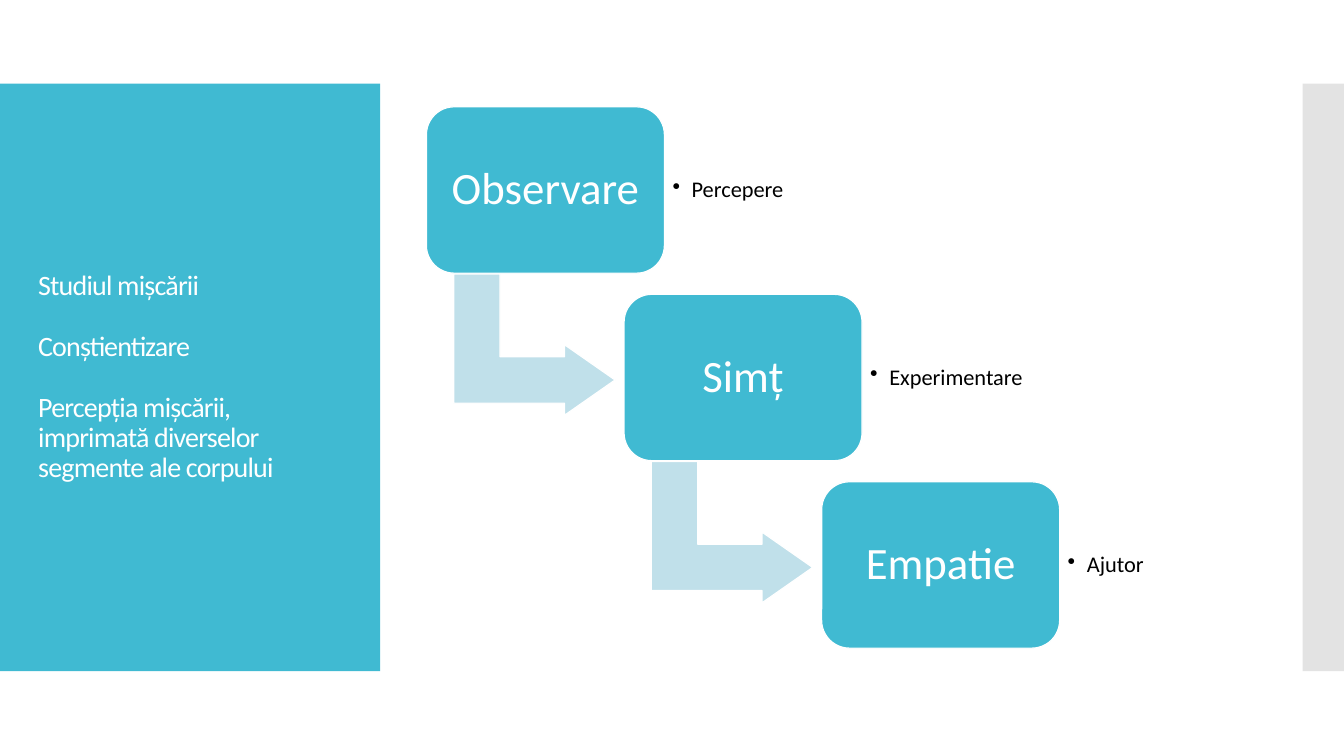
"""Build a slide on movement study with a three-step staircase from observation to empathy."""
from lxml import etree
from pptx import Presentation
from pptx.dml.color import RGBColor
from pptx.enum.shapes import MSO_SHAPE
from pptx.enum.text import MSO_ANCHOR, PP_ALIGN
from pptx.oxml.ns import qn
from pptx.util import Inches, Pt

COLORS = {"teal": "40BAD2", "pale": "C0E0EA", "grey": "C8C8C8", "white": "FFFFFF", "black": "000000"}
TOPICS = ["Studiul mișcării", "Conștientizare", "Percepția mișcării, imprimată diverselor segmente ale corpului"]
STEPS = [("Observare", "Percepere"), ("Simț", "Experimentare"), ("Empatie", "Ajutor")]
LEFT, TOP = 4.23, 1.06
STEP_X, STEP_Y = 1.96, 1.86
BOX_W, BOX_H = 2.36, 1.65

prs = Presentation()
prs.slide_width, prs.slide_height = Inches(13.33), Inches(7.5)
slide = prs.slides.add_slide(prs.slide_layouts[6])


def add_block(kind, left, top, width, height, color, outlined=False):
    block = slide.shapes.add_shape(kind, Inches(left), Inches(top), Inches(width), Inches(height))
    block.shadow.inherit = False
    block.fill.solid()
    block.fill.fore_color.rgb = RGBColor.from_string(COLORS[color])
    if outlined:
        block.line.color.rgb = RGBColor.from_string(COLORS["white"])
        block.line.width = Pt(0.85)
    else:
        block.line.fill.background()
    return block


def write(shape, lines, size, color, align, inset):
    frame = shape.text_frame
    frame.word_wrap = True
    frame.vertical_anchor = MSO_ANCHOR.MIDDLE
    frame.margin_left = frame.margin_right = frame.margin_top = frame.margin_bottom = Inches(inset)
    frame.text = "\n".join(lines)
    for paragraph in frame.paragraphs:
        paragraph.alignment = align
        paragraph.line_spacing = 0.9
        paragraph.font.size = Pt(size)
        paragraph.font.name = "Calibri"
        paragraph.font.color.rgb = RGBColor.from_string(COLORS[color])
    return frame.paragraphs


add_block(MSO_SHAPE.RECTANGLE, 0, 0.83, 3.77, 5.83, "teal")
edge_bar = add_block(MSO_SHAPE.RECTANGLE, 12.92, 0.83, 0.41, 5.83, "grey")
edge_color = edge_bar.fill._xPr.find(qn("a:solidFill"))[0]
etree.SubElement(edge_color, qn("a:alpha"), val="50000")

topics = slide.shapes.add_textbox(Inches(0.28), Inches(1.23), Inches(3.22), Inches(5.03))
topic_lines = write(topics, TOPICS, 20, "white", PP_ALIGN.LEFT, 0.1)
for topic in topic_lines:
    topic.runs[0].font._element.set("spc", "-60")
for topic in topic_lines[:-1]:
    topic.space_after = Pt(22)

for index, (step, meaning) in enumerate(STEPS):
    left, top = LEFT + index * STEP_X, TOP + index * STEP_Y
    if index < len(STEPS) - 1:
        bend = add_block(MSO_SHAPE.BENT_UP_ARROW, left + 0.37, top + 1.56, 1.4, 1.6, "pale", True)
        bend.rotation = 90
        for position, ratio in enumerate([0.328, 0.25, 0.358]):
            bend.adjustments[position] = ratio

    step_box = add_block(MSO_SHAPE.ROUNDED_RECTANGLE, left, top, BOX_W, BOX_H, "teal", True)
    step_box.adjustments[0] = 0.167
    write(step_box, [step], 32, "white", PP_ALIGN.CENTER, 0.13)

    note = slide.shapes.add_textbox(Inches(left + BOX_W), Inches(top + 0.16), Inches(1.72), Inches(1.34))
    bullet_line = write(note, [meaning], 16, "black", PP_ALIGN.LEFT, 0.08)[0]
    properties = bullet_line._p.get_or_add_pPr()
    properties.set("marL", str(Inches(0.19)))
    properties.set("indent", str(Inches(-0.19)))
    bullet = etree.Element(qn("a:buChar"), char="•")
    properties.find(qn("a:defRPr")).addprevious(bullet)

prs.save("out.pptx")
